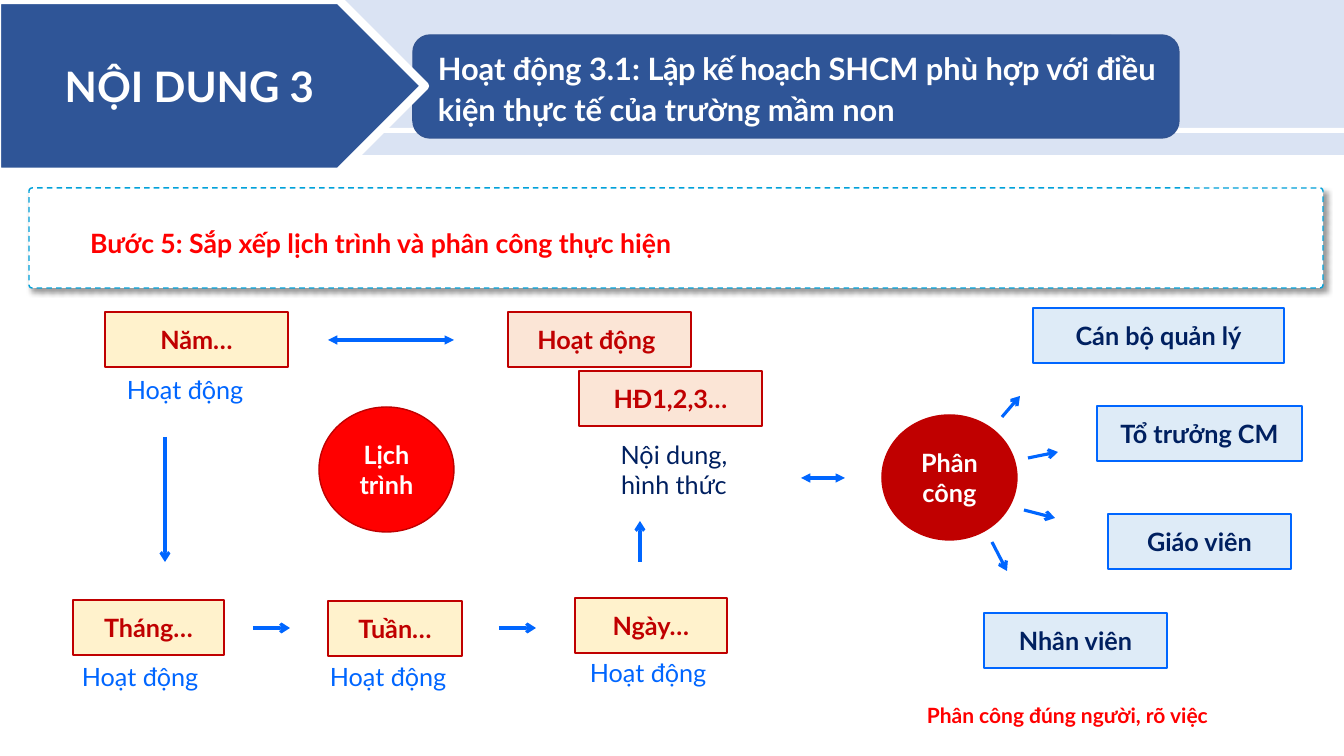
from dataclasses import dataclass

import pptx
import pptx.dml.color
import pptx.enum.dml
import pptx.enum.shapes
import pptx.enum.text
import pptx.oxml
import pptx.oxml.ns
import pptx.util

SHAPES = pptx.enum.shapes.MSO_SHAPE
ALIGN = pptx.enum.text.PP_ALIGN
ANCHOR = pptx.enum.text.MSO_ANCHOR


@dataclass(frozen=True)
class Theme:
    font: str = "Lato"
    white: str = "FFFFFF"
    pale: str = "DAE3F3"
    navy: str = "2F5597"
    navy_edge: str = "325491"
    red: str = "FF0000"
    dark_red: str = "C00000"
    cyan: str = "00A1DA"
    blue: str = "0066FF"
    ink: str = "002060"
    cream: str = "FFF2CC"
    peach: str = "FBE5D6"
    ice: str = "DEEBF7"
    banner: int = 30
    title: int = 22
    step: int = 19
    body: int = 18
    note: int = 15


THEME = Theme()

# Content: positions and lengths in px
PAGE = (1344, 756)
BANNER = "NỘI DUNG 3"
TITLE = [  # text, letter spacing in hundredths of a point
    ("Hoạt động 3.1: ", 0),
    ("Lập kế hoạch ", -30),
    ("SHCM phù hợp với điều kiện thực tế của trường mầm non", 0),
]
STEP = "Bước 5: Sắp xếp lịch trình và phân công thực hiện"
NOTE = "Phân công đúng người, rõ việc"

BOX_HEIGHT = 55
BOX_GROUPS = [  # fill, edge, text colour, boxes as (text, left, top, width)
    (THEME.cream, THEME.dark_red, THEME.dark_red, [
        ("Năm…", 105, 312, 183),
        ("Tháng…", 73, 600, 151),
        ("Tuần…", 328, 601, 134),
        ("Ngày…", 575, 598, 152),
    ]),
    (THEME.peach, THEME.dark_red, THEME.dark_red, [
        ("Hoạt động ", 508, 312, 183),
        ("HĐ1,2,3…", 579, 371, 183),
    ]),
    (THEME.ice, THEME.blue, THEME.ink, [
        ("Cán bộ quản lý", 1033, 308, 251),
        ("Tổ trưởng CM", 1097, 406, 205),
        ("Giáo viên", 1108, 514, 183),
        ("Nhân viên", 984, 613, 183),
    ]),
]
HUB_SIZE = (135, 125)
HUBS = [("Lịch trình", 319, 407, THEME.red), ("Phân công", 882, 415, THEME.dark_red)]
CAPTION = "Hoạt động"
CAPTION_SIZE = (155, 40)
CAPTION_SPOTS = [(117, 369), (72, 656), (320, 656), (580, 652)]
DETAIL = "Nội dung, hình thức"

TWO_WAY_ARROWS = [(328, 340, 454, 340), (801, 478, 845, 478)]
ONE_WAY_ARROWS = [
    (165, 437, 165, 562),
    (253, 628, 290, 628),
    (499, 628, 536, 628),
    (640, 562, 640, 521),
    (1002, 417, 1020, 396),
    (1028, 458, 1058, 452),
    (1024, 510, 1055, 518),
    (992, 542, 1007, 571),
]


# Helpers
def px(*lengths):
    return [round(length * 914400 / 100.8) for length in lengths]


def rgb(code):
    return pptx.dml.color.RGBColor.from_string(code)


def add_element(parent, tag, **attributes):
    child = parent.makeelement(pptx.oxml.ns.qn(tag), attributes)
    parent.append(child)
    return child


def write(shape, spans, size, color, bold=True, align=ALIGN.CENTER, anchor=ANCHOR.MIDDLE):
    frame = shape.text_frame
    frame.word_wrap = True
    frame.vertical_anchor = anchor
    para = frame.paragraphs[0]
    para.alignment = align
    for text, spacing in spans:
        span = para.add_run()
        span.text = text
        span.font.name = THEME.font
        span.font.size = pptx.util.Pt(size)
        span.font.bold = bold
        span.font.color.rgb = rgb(color)
        if spacing:
            span.font._element.set("spc", str(spacing))
    return para


def add_block(kind, place, fill, edge=None, weight=1):
    shape = page.shapes.add_shape(kind, *px(*place))
    shape.shadow.inherit = False
    shape.fill.solid()
    shape.fill.fore_color.rgb = rgb(fill)
    if edge:
        shape.line.color.rgb = rgb(edge)
        shape.line.width = pptx.util.Pt(weight)
    else:
        shape.line.fill.background()
    return shape


def add_label(place, spans, size, color, bold=False, align=ALIGN.LEFT):
    box = page.shapes.add_textbox(*px(*place))
    return write(box, spans, size, color, bold, align, ANCHOR.TOP)


def add_arrow(ends, head, tail):
    straight = pptx.enum.shapes.MSO_CONNECTOR.STRAIGHT
    arrow = page.shapes.add_connector(straight, *px(*ends))
    arrow.line.color.rgb = rgb(THEME.blue)
    arrow.line.width = pptx.util.Pt(2.25)
    stroke = arrow.line._get_or_add_ln()
    if head:
        add_element(stroke, "a:headEnd", type=head)
    add_element(stroke, "a:tailEnd", type=tail)
    add_element(arrow._element.spPr, "a:effectLst")


deck = pptx.Presentation()
deck.slide_width, deck.slide_height = px(*PAGE)
page = deck.slides.add_slide(deck.slide_layouts[6])

# Header
add_block(SHAPES.RECTANGLE, (0, 0, 1344, 155), THEME.pale)
add_block(SHAPES.RECTANGLE, (224, 128, 1120, 5), THEME.white)
add_block(SHAPES.ROUNDED_RECTANGLE, (413, 35, 766, 103), THEME.navy, THEME.navy_edge)
banner = add_block(SHAPES.PENTAGON, (-3, 0, 428, 172), THEME.navy, THEME.white, 6)
write(banner, [(BANNER, 0)], THEME.banner, THEME.white)
title = add_label((428, 41, 751, 91), TITLE, THEME.title, THEME.white, bold=True)
title.line_spacing = 1.1

# Step panel with dashed edge and soft shadow
panel = add_block(SHAPES.ROUNDED_RECTANGLE, (29, 188, 1294, 100), THEME.white, THEME.cyan)
panel.adjustments[0] = 0.03
panel.line.dash_style = pptx.enum.dml.MSO_LINE.DASH
effects = panel._element.spPr.find(pptx.oxml.ns.qn("a:effectLst"))
shadow = add_element(effects, "a:outerShdw", blurRad="50800", dist="38100",
                     dir="2700000", algn="tl", rotWithShape="0")
shade = add_element(shadow, "a:srgbClr", val="000000")
add_element(shade, "a:alpha", val="40000")
step = write(panel, [(STEP, 0)], THEME.step, THEME.red, align=ALIGN.LEFT)
step.line_spacing = 1.3
step._p.get_or_add_pPr().set("indent", "457200")

# Hubs and boxes
for text, left, top, fill in HUBS:
    hub = add_block(SHAPES.OVAL, (left, top, *HUB_SIZE), fill, THEME.dark_red)
    write(hub, [(text, 0)], THEME.body, THEME.white)
for fill, edge, color, boxes in BOX_GROUPS:
    for text, left, top, width in boxes:
        box = add_block(SHAPES.RECTANGLE, (left, top, width, BOX_HEIGHT), fill, edge, 1.5)
        write(box, [(text, 0)], THEME.body, color)

# Captions
for spot in CAPTION_SPOTS:
    add_label((*spot, *CAPTION_SIZE), [(CAPTION, 0)], THEME.body, THEME.blue)
add_label((600, 434, 148, 72), [(DETAIL, 0)], THEME.body, THEME.ink, align=ALIGN.CENTER)
add_label((917, 698, 355, 35), [(NOTE, 0)], THEME.note, THEME.red, bold=True)

# Arrows
for ends in TWO_WAY_ARROWS:
    add_arrow(ends, "triangle", "triangle")
for ends in ONE_WAY_ARROWS:
    add_arrow(ends, None, "arrow")

deck.save("out.pptx")
